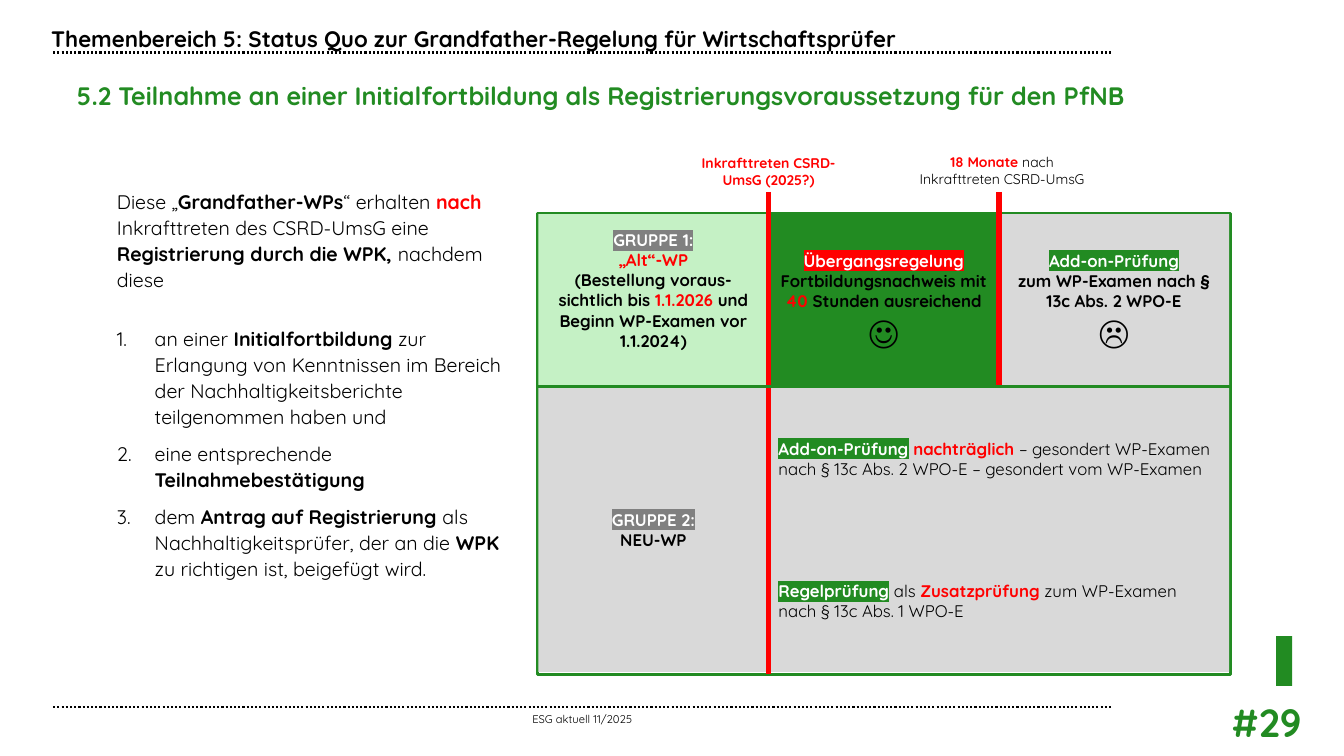
from lxml import etree
from pptx import Presentation
from pptx.dml.color import RGBColor
from pptx.enum.dml import MSO_LINE
from pptx.enum.shapes import MSO_CONNECTOR, MSO_SHAPE
from pptx.enum.text import MSO_ANCHOR as Anchor, MSO_AUTO_SIZE, PP_ALIGN as Align
from pptx.oxml.ns import qn
from pptx.util import Pt

FONT = "Quicksand"
COLORS = {
    "black": "000000", "white": "FFFFFF", "red": "FF0000", "green": "228B22",
    "mint": "C5F1C5", "silver": "D9D9D9", "gray": "808080",
}

# Grid of the group overview
GRID_LEFT, GRID_TOP, COLUMN = 384.5, 153, 164.5
ROW_TOPS = [GRID_TOP, 276.5, 378.5]
GRID_BOTTOM = 480
COLUMN_LEFTS = [GRID_LEFT + COLUMN * index for index in range(3)]


def rgb(name):
    return RGBColor.from_string(COLORS[name])


def add_run(paragraph, size, text, color="black", bold=False, highlight=None):
    run = paragraph.add_run()
    run.text = text
    run.font.size = Pt(size)
    run.font.bold = bold
    run.font.color.rgb = rgb(color)
    if highlight:
        mark = etree.SubElement(run.font._element, qn("a:highlight"))
        etree.SubElement(mark, qn("a:srgbClr")).set("val", COLORS[highlight])
    run.font.name = FONT


def fill_text(frame, paragraphs, size, align=Align.LEFT, anchor=Anchor.TOP, margins=(7.2, 3.6)):
    """Each paragraph is a list of runs: (text, color, bold, highlight)."""
    frame.word_wrap = True
    frame.auto_size = MSO_AUTO_SIZE.NONE
    frame.vertical_anchor = anchor
    frame.margin_left = frame.margin_right = Pt(margins[0])
    frame.margin_top = frame.margin_bottom = Pt(margins[1])
    for index, runs in enumerate(paragraphs):
        paragraph = frame.paragraphs[0] if index == 0 else frame.add_paragraph()
        paragraph.alignment = align
        paragraph.space_before = Pt(0)
        for run in runs:
            add_run(paragraph, size, *run)


def place(shape, left, top, width, height):
    shape.left, shape.top, shape.width, shape.height = map(Pt, (left, top, width, height))


def add_label(slide, box, runs, size, **layout):
    label = slide.shapes.add_textbox(*map(Pt, box))
    fill_text(label.text_frame, [runs], size, **layout)
    return label


def add_box(slide, box, fill, line=None):
    shape = slide.shapes.add_shape(MSO_SHAPE.RECTANGLE, *map(Pt, box))
    shape.shadow.inherit = False
    shape.fill.solid()
    shape.fill.fore_color.rgb = rgb(fill)
    if line:
        shape.line.color.rgb = rgb(line)
        shape.line.width = Pt(2)
    else:
        shape.line.fill.background()
    return shape


def add_cell(slide, column, row, fill, paragraphs, span=1, rows=1, align=Align.CENTER):
    top = ROW_TOPS[row]
    bottom = (ROW_TOPS + [GRID_BOTTOM])[row + rows]
    cell = add_box(slide, (COLUMN_LEFTS[column], top, COLUMN * span, bottom - top), fill)
    fill_text(cell.text_frame, paragraphs, 12, align, Anchor.MIDDLE)
    return cell


def add_line(slide, start, end, color, width, dotted=False):
    line = slide.shapes.add_connector(MSO_CONNECTOR.STRAIGHT, *map(Pt, start + end))
    line.line.color.rgb = rgb(color)
    line.line.width = Pt(width)
    if dotted:
        line.line.dash_style = MSO_LINE.ROUND_DOT
    etree.SubElement(line._element.spPr, qn("a:effectLst"))
    return line


def add_title(slide):
    title = slide.shapes.title
    place(title, 55, 57, 793, 25)
    heading = "5.2 Teilnahme an einer Initialfortbildung als Registrierungsvoraussetzung für den PfNB"
    fill_text(title.text_frame, [[(heading, "green", True)]], 18, margins=(0, 0))


def add_requirements(slide):
    body = slide.placeholders[1]
    place(body, 83.5, 134, 289, 338)
    fill_text(body.text_frame, [
        [("Diese „",), ("Grandfather-WPs", "black", True), ("“ erhalten ",),
         ("nach", "red", True), (" Inkrafttreten des CSRD-UmsG eine ",),
         ("Registrierung durch die WPK, ", "black", True), ("nachdem diese",)],
        [("an einer ",), ("Initialfortbildung", "black", True),
         (" zur Erlangung von Kenntnissen im Bereich der Nachhaltigkeitsberichte "
          "teilgenommen haben und",)],
        [("eine entsprechende ",), ("Teilnahmebestätigung", "black", True)],
        [("dem ",), ("Antrag auf Registrierung ", "black", True),
         ("als Nachhaltigkeitsprüfer, der an die ",), ("WPK", "black", True),
         (" zu richtigen ist, beigefügt wird.",)],
    ], 14, margins=(0, 0))
    for index, paragraph in enumerate(body.text_frame.paragraphs):
        paragraph.line_spacing = 1.1
        paragraph.space_before = Pt((0, 24, 8, 8)[index])
        properties = paragraph._p.get_or_add_pPr()
        indent = Pt(27) if index else 0
        properties.set("marL", str(indent))
        properties.set("indent", str(-indent))
        if index:
            etree.SubElement(properties, qn("a:buFont")).set("typeface", "+mj-lt")
            etree.SubElement(properties, qn("a:buAutoNum")).set("type", "arabicPeriod")
        else:
            etree.SubElement(properties, qn("a:buNone"))


def add_groups(slide):
    add_box(slide, (383.8, 152.6, 495.4, 329), "white", "green")

    # Group 1
    group = add_cell(slide, 0, 0, "mint", [
        [("GRUPPE 1:", "white", True, "gray")],
        [("„Alt“-WP", "red", True)],
        [("(Bestellung voraus-sichtlich bis ", "black", True), ("1.1.2026", "red", True),
         (" und Beginn WP-Examen vor 1.1.2024)", "black", True)],
    ])
    group.text_frame.margin_bottom = Pt(18.6)
    transition = add_cell(slide, 1, 0, "green", [
        [("Übergangsregelung", "white", True, "red")],
        [("Fortbildungsnachweis mit ", "black", True), ("40", "red", True),
         (" Stunden ausreichend", "black", True)],
        [("☺", "black", True)],
    ])
    addon = add_cell(slide, 2, 0, "silver", [
        [("Add-on-Prüfung", "white", True, "green")],
        [("zum WP-Examen nach § 13c Abs. 2 WPO-E", "black", True)],
        [("☹", "black", True)],
    ])
    for cell in (transition, addon):
        cell.text_frame.paragraphs[-1].runs[0].font.size = Pt(24)

    # Group 2
    add_cell(slide, 0, 1, "silver", [
        [("GRUPPE 2:", "white", True, "gray")], [("NEU-WP", "black", True)],
    ], rows=2)
    add_cell(slide, 1, 1, "silver", [[
        ("Add-on-Prüfung", "white", True, "green"), (" ", "black", True),
        ("nachträglich ", "red", True),
        ("– gesondert WP-Examen nach § 13c Abs. 2 WPO-E – gesondert vom WP-Examen",),
    ]], span=2, align=Align.LEFT)
    add_cell(slide, 1, 2, "silver", [[
        ("Regelprüfung", "white", True, "green"), (" als ",),
        ("Zusatzprüfung", "red", True), (" zum WP-Examen nach § 13c Abs. 1 WPO-E",),
    ]], span=2, align=Align.LEFT)


def add_deadlines(slide):
    first, second = COLUMN_LEFTS[1:]
    layout = {"align": Align.CENTER, "anchor": Anchor.MIDDLE}
    start = add_label(slide, (first - 57, 108, 114, 29),
                      [("Inkrafttreten CSRD-UmsG (2025?)", "red", True)], 10, **layout)
    add_label(slide, (644.5, 107, 142.5, 29),
              [("18 Monate ", "red", True), ("nach Inkrafttreten CSRD-UmsG",)], 10, **layout)
    start_line = add_line(slide, (first, 137), (first, 481.5), "red", 4)
    start_line.begin_connect(start, 2)
    add_line(slide, (second, 137), (second, 276), "red", 4)
    add_line(slide, (GRID_LEFT, 276), (879, 276), "green", 2.25)


def add_page_frame(slide):
    for top in (37.5, 505):
        add_line(slide, (38, top), (795, top), "black", 1.5, dotted=True)
    header = "Themenbereich 5: Status Quo zur Grandfather-Regelung für Wirtschaftsprüfer"
    add_label(slide, (29.5, 14.4, 796, 27), [(header, "black", True)], 16)
    add_label(slide, (37.5, 509, 757, 9.5), [("ESG aktuell 11/2025",)], 8,
              align=Align.CENTER, anchor=Anchor.MIDDLE, margins=(0, 0))
    add_label(slide, (820, 495.5, 116.6, 41), [("#29", "green", True)], 28, align=Align.RIGHT)
    add_box(slide, (911.5, 454.3, 11.5, 35.7), "green")


def main():
    presentation = Presentation()
    presentation.slide_width, presentation.slide_height = Pt(960), Pt(540)
    slide = presentation.slides.add_slide(presentation.slide_layouts[1])
    add_page_frame(slide)
    add_title(slide)
    add_requirements(slide)
    add_groups(slide)
    add_deadlines(slide)
    presentation.save("out.pptx")


if __name__ == "__main__":
    main()
